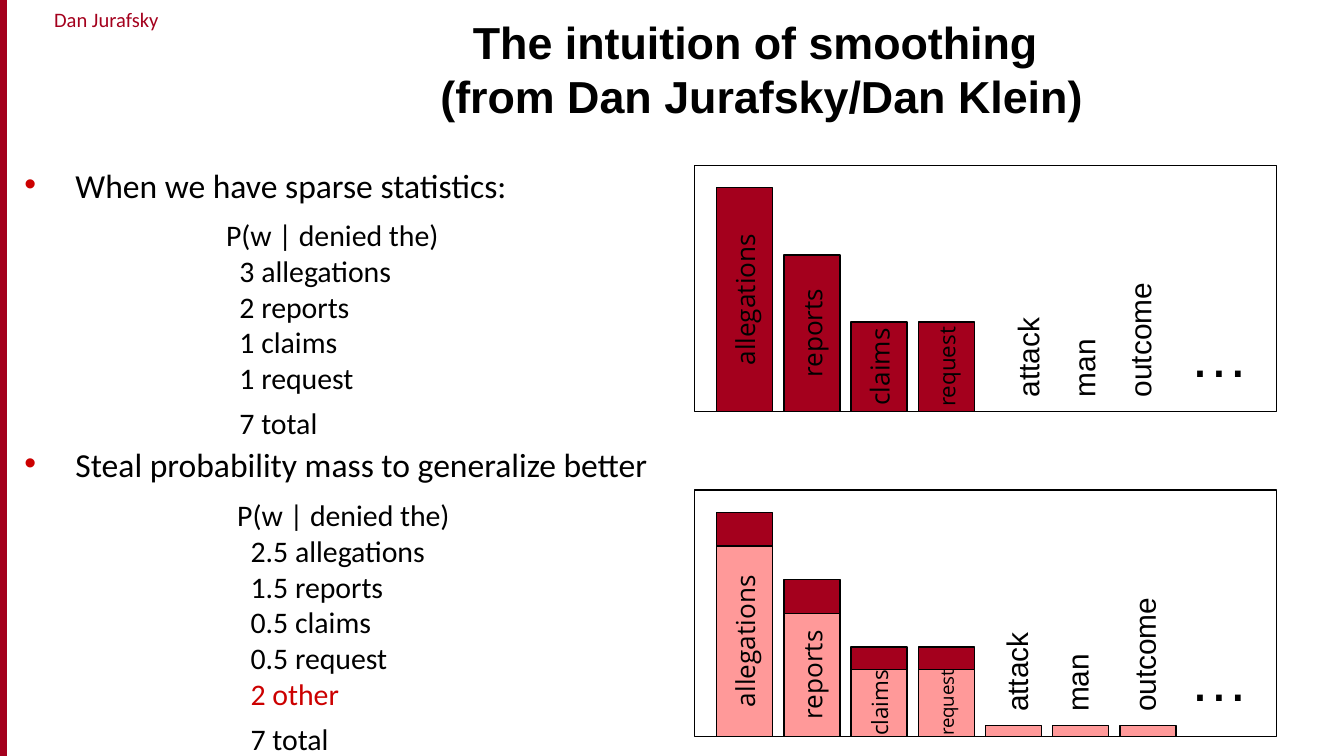
from lxml import etree
from pptx import Presentation
from pptx.dml.color import RGBColor
from pptx.enum.shapes import MSO_SHAPE
from pptx.enum.text import MSO_ANCHOR, PP_ALIGN
from pptx.oxml.ns import qn
from pptx.util import Inches, Pt

RECT = MSO_SHAPE.RECTANGLE
TOP, MIDDLE, BOTTOM = MSO_ANCHOR.TOP, MSO_ANCHOR.MIDDLE, MSO_ANCHOR.BOTTOM
LEFT, CENTER = PP_ALIGN.LEFT, PP_ALIGN.CENTER
BLACK = RGBColor(0x00, 0x00, 0x00)
RED = RGBColor(0xCC, 0x00, 0x00)
WINE = RGBColor(0xA4, 0x00, 0x1D)
PINK = RGBColor(0xFF, 0x99, 0x99)
COLS, ROWS = 120, 67.5
WORDS = ["allegations", "reports", "claims", "request"]
UNSEEN = ["attack", "man", "outcome"]


def grid(n):
    """Turn grid units, twelve to the inch, into a length."""
    return Inches(n / 12)


def style(para, size, font, color=BLACK, align=LEFT, bold=False):
    """Set the font and alignment of a paragraph."""
    para.alignment = align
    para.font.size, para.font.name = Pt(size), font
    para.font.color.rgb, para.font.bold = color, bold


def text(slide, box, anchor=TOP):
    """Add an empty wrapping text box and return its frame and shape."""
    shape = slide.shapes.add_textbox(*map(grid, box))
    frame = shape.text_frame
    frame.word_wrap, frame.vertical_anchor = True, anchor
    return frame, shape


def label(slide, box, words, size, font="Arial", turn=0, **look):
    """Add a one-paragraph text box."""
    frame, shape = text(slide, box, look.pop("anchor", TOP))
    shape.rotation = turn
    frame.text = words
    style(frame.paragraphs[0], size, font, **look)
    return frame


def rect(slide, box, fill=None, line=BLACK):
    """Add a thinly outlined rectangle."""
    shape = slide.shapes.add_shape(RECT, *map(grid, box))
    shape.shadow.inherit = False
    if fill is None:
        shape.fill.background()
    else:
        shape.fill.solid()
        shape.fill.fore_color.rgb = fill
    shape.line.color.rgb, shape.line.width = line, Pt(0.75)
    return shape


def bar(slide, left, base, tall, fill, word="", size=14):
    """Stand a turned bar on a base line."""
    wide = 5
    mid = left + wide / 2
    box = (mid - tall / 2, base - tall / 2 - wide / 2, tall, wide)
    shape = rect(slide, box, fill)
    shape.rotation = 270
    if word:
        frame = shape.text_frame
        frame.word_wrap, frame.vertical_anchor = False, MIDDLE
        frame.text = word
        style(frame.paragraphs[0], size, "Open Sans", align=CENTER)


def panel(slide, box, layers, mids, row):
    """Draw a frame of word bars with labels for unseen words."""
    left, top, _, high = box
    rect(slide, box)
    for fill, bars in layers:
        for i, (tall, word, size) in enumerate(bars):
            bar(slide, left + 2 + 6 * i, top + high, tall, fill, word, size)
    wide, deep = 15, 4.4
    for word, mid in zip(UNSEEN, mids):
        place = (left + mid - wide / 2, top + row - deep / 2, wide, deep)
        label(slide, place, word, 16, turn=270)
    label(slide, (left + 43, top + 13, 7, 7.5), "…", 32)


def counts(slide, box, rows, total):
    """List the word counts under their heading."""
    frame, _ = text(slide, box)
    lines = ["P(w | denied the)", *rows, total]
    for i, line in enumerate(lines):
        para = frame.paragraphs[0] if i == 0 else frame.add_paragraph()
        para.text = line
        if i:
            para._p.get_or_add_pPr().set("marL", str(Inches(0.1)))
        if line == total:
            para.space_before = Pt(4.9)
        style(para, 16, "Calibri", RED if "other" in line else BLACK)


def points(slide, box, lines, gap):
    """Write the bulleted points, a gap apart."""
    frame, _ = text(slide, box)
    for i, line in enumerate(lines):
        para = frame.paragraphs[0] if i == 0 else frame.add_paragraph()
        para.text = line
        para.line_spacing = 0.7
        para.space_before = Pt(gap * i)
        props = para._p.get_or_add_pPr()
        props.set("marL", str(Inches(0.38)))
        props.set("indent", str(-Inches(0.38)))
        tint = etree.SubElement(props, qn("a:buClr"))
        etree.SubElement(tint, qn("a:srgbClr")).set("val", str(RED))
        etree.SubElement(props, qn("a:buFont")).set("typeface", "Arial")
        etree.SubElement(props, qn("a:buChar")).set("char", "•")
        style(para, 18, "Calibri")


def header(slide, box):
    """Place the edge strip, the author and the title."""
    left, top, wide, high = box
    rect(slide, (left, top, 0.6, high), WINE, WINE)
    author = label(slide, (left + 1, top, 17, 3.5), "Dan Jurafsky", 11,
                   "Calibri", color=WINE, align=CENTER)
    author.margin_left = author.margin_right = 0
    label(slide, (left + wide / 6, top + 1.8, wide * 0.8, 9.7),
          "The intuition of smoothing \v(from Dan Jurafsky/Dan Klein)", 24,
          align=CENTER, bold=True, anchor=BOTTOM)


def main():
    """Build and save the slide."""
    deck = Presentation()
    deck.slide_width, deck.slide_height = grid(COLS), grid(ROWS)
    slide = deck.slides.add_slide(deck.slide_layouts[6])
    header(slide, (0, 0, COLS, ROWS))
    points(slide, (1, 15.1, 108, 52.4),
           ["When we have sparse statistics:",
            "Steal probability mass to generalize better"], 134.6)
    counts(slide, (19, 18.75, 32, 21.4),
           [f"{n} {word}" for n, word in zip((3, 2, 1, 1), WORDS)],
           "7 total")
    counts(slide, (20, 43.75, 32, 23.75),
           [f"{n} {word}" for n, word in
            zip((2.5, 1.5, 0.5, 0.5, 2), WORDS + ["other"])], "7 total")
    full, blank = (20, 14, 8, 8), [""] * 4
    seen = list(zip(full, WORDS, (14, 14, 14, 12)))
    cut = list(zip(full, blank, (14,) * 4))
    kept = list(zip((17, 11, 6, 6), WORDS, (14, 14, 12, 10)))
    kept += [(1, "", 10)] * len(UNSEEN)
    panel(slide, (62, 14.75, 52, 22), [(WINE, seen)],
          (29.75, 34.75, 39.75), 14.4)
    panel(slide, (62, 43.75, 52, 22), [(WINE, cut), (PINK, kept)],
          (28.75, 34.15, 40.15), 13.5)
    deck.save("out.pptx")


if __name__ == "__main__":
    main()
